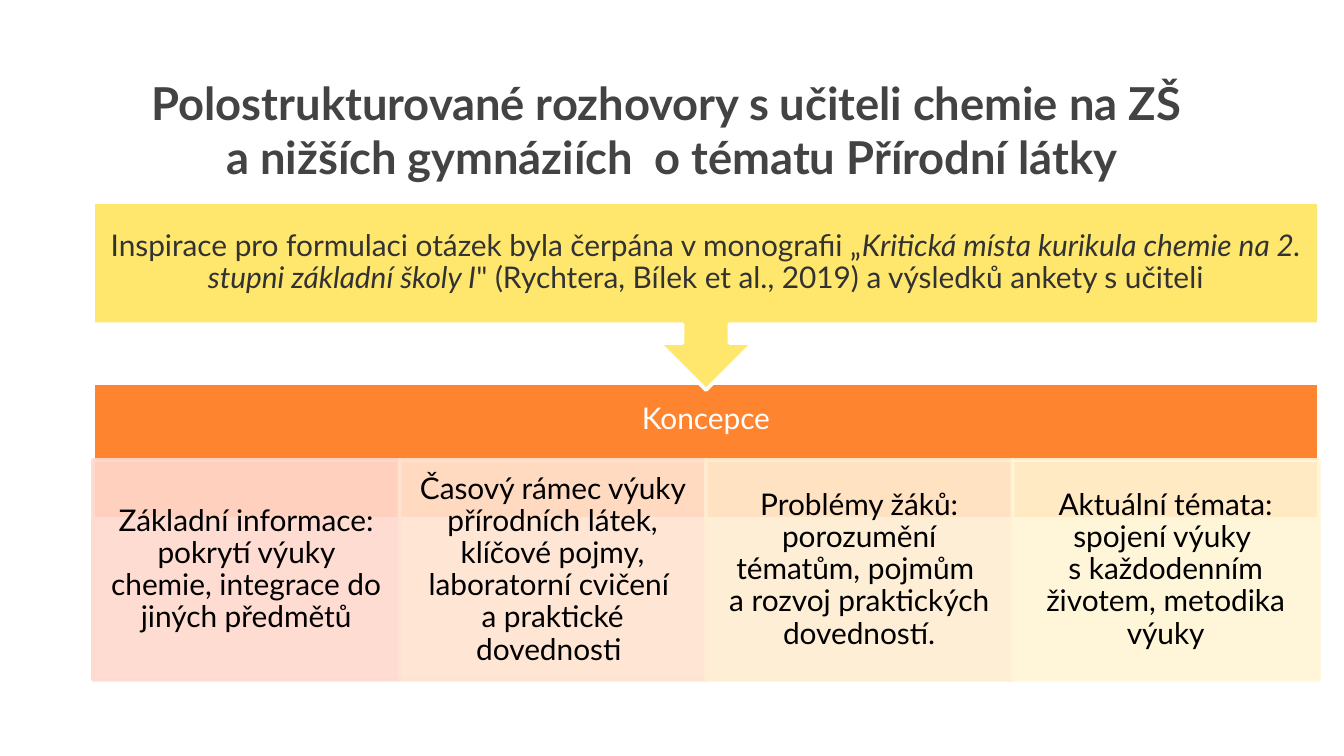
from lxml.etree import SubElement
from pptx import Presentation
from pptx.dml.color import RGBColor as RGB
from pptx.enum.shapes import MSO_SHAPE as Shape
from pptx.enum.text import MSO_ANCHOR as Anchor, PP_ALIGN as Align
from pptx.oxml.ns import qn
from pptx.util import Pt

PX = 914400 / 134.4  # EMU in one px
FONT = "Lato"
WHITE = RGB(0xFF, 0xFF, 0xFF)
BLACK = RGB(0, 0, 0)
GREY = RGB(0x43, 0x43, 0x43)
DARK = RGB(0x32, 0x32, 0x32)
ORANGE = RGB(0xFF, 0x84, 0x2F)
YELLOW = RGB(0xFF, 0xE7, 0x6E)

# Content: a text is a list of (words, italic) runs, "\n" breaks a line
TITLE = [("Polostrukturované rozhovory s učiteli chemie na ZŠ \n"
          "a nižších gymnáziích  o tématu Přírodní látky", False)]
SOURCE = [
    ("Inspirace pro formulaci otázek byla čerpána v monografii „", False),
    ("Kritická místa kurikula chemie na 2. stupni základní školy I", True),
    ("\" (Rychtera, Bílek et al., 2019) a výsledků ankety s učiteli", False),
]
HEAD = [("Koncepce", False)]
TOPICS = [
    ("Základní informace: pokrytí výuky chemie, integrace do jiných předmětů",
     RGB(0xFF, 0xD9, 0xCD)),
    ("Časový rámec výuky přírodních látek, klíčové pojmy, laboratorní cvičení \n"
     "a praktické dovednosti ", RGB(0xFF, 0xE3, 0xD0)),
    ("Problémy žáků: porozumění tématům, pojmům \n"
     "a rozvoj praktických dovedností.", RGB(0xFF, 0xED, 0xD2)),
    ("Aktuální témata: spojení výuky \n"
     "s každodenním životem, metodika výuky", RGB(0xFF, 0xF6, 0xD5)),
]

# Layout in px
LEFT, WIDE = 93, 1226
BAND_TOP, BAND_H, HEAD_H = 383, 136, 73
PAD = 16


def emu(*nums):
    return [round(n * PX) for n in nums]


def write(shape, runs, size=16, color=BLACK, bold=False, gap=0.9,
          anchor=Anchor.MIDDLE, pad=(PAD, PAD, PAD, PAD)):
    frame = shape.text_frame
    frame.word_wrap = True
    frame.vertical_anchor = anchor
    (frame.margin_left, frame.margin_top,
     frame.margin_right, frame.margin_bottom) = emu(*pad)
    para = frame.paragraphs[0]
    para.alignment = Align.CENTER
    para.line_spacing = gap
    for words, slant in runs:
        for i, line in enumerate(words.split("\n")):
            if i:
                para.add_line_break()
            run = para.add_run()
            run.text = line
            font = run.font
            font.name, font.size, font.color.rgb = FONT, Pt(size), color
            font.bold, font.italic = bold, slant


def draw(slide, kind, box, fill, edge, alpha=None):
    shape = slide.shapes.add_shape(kind, *emu(*box))
    shape.shadow.inherit = False
    shape.fill.solid()
    shape.fill.fore_color.rgb = fill
    shape.line.color.rgb = edge
    shape.line.width = Pt(2)
    if alpha:
        for tone in shape.element.spPr.iter(qn("a:srgbClr")):
            SubElement(tone, qn("a:alpha"), val=str(alpha * 1000))
    return shape


def main():
    deck = Presentation()
    deck.slide_width, deck.slide_height = emu(1344, 756)
    slide = deck.slides.add_slide(deck.slide_layouts[6])

    # Title
    title = slide.shapes.add_textbox(*emu(LEFT, 62, 1158, 125))
    write(title, TITLE, size=24.3, color=GREY, bold=True, gap=1.0,
          anchor=Anchor.TOP, pad=(13, 13, 13, 13))

    # Concept band, its text kept above the topics
    band = draw(slide, Shape.RECTANGLE, (LEFT, BAND_TOP, WIDE, BAND_H),
                ORANGE, WHITE)
    write(band, HEAD, color=WHITE,
          pad=(PAD, PAD, PAD, PAD + BAND_H - HEAD_H))

    # Topics in equal columns
    step = WIDE / len(TOPICS)
    for i, (words, tint) in enumerate(TOPICS):
        cell = draw(slide, Shape.RECTANGLE, (LEFT + i * step, 460, step, 220),
                    tint, tint, alpha=90)
        write(cell, [(words, False)], pad=(PAD, 3, PAD, 3))

    # Source callout pointing at the band
    call = draw(slide, Shape.DOWN_ARROW_CALLOUT, (LEFT, 202, WIDE, 188),
                YELLOW, WHITE)
    write(call, SOURCE, color=DARK)

    deck.save("out.pptx")


if __name__ == "__main__":
    main()
